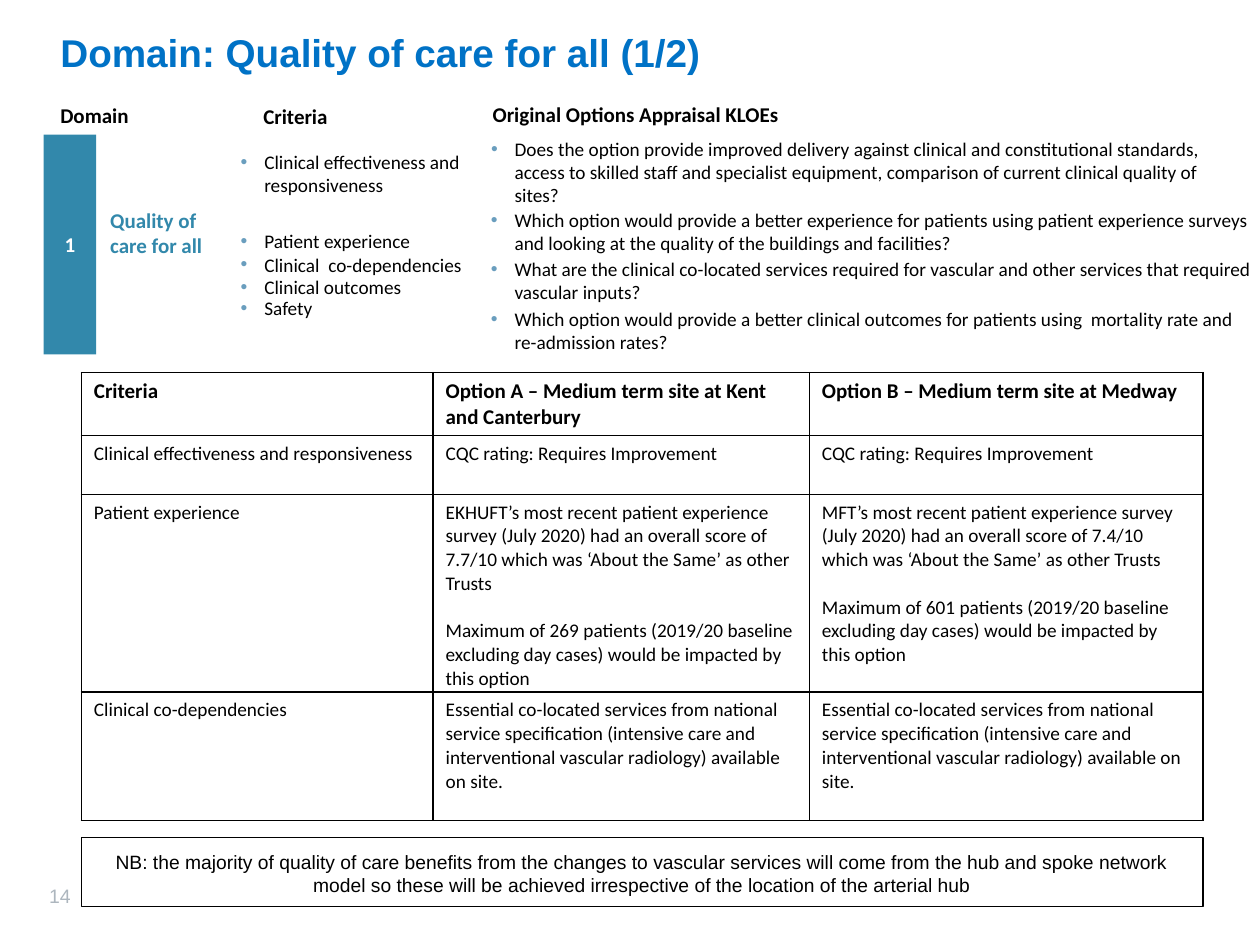
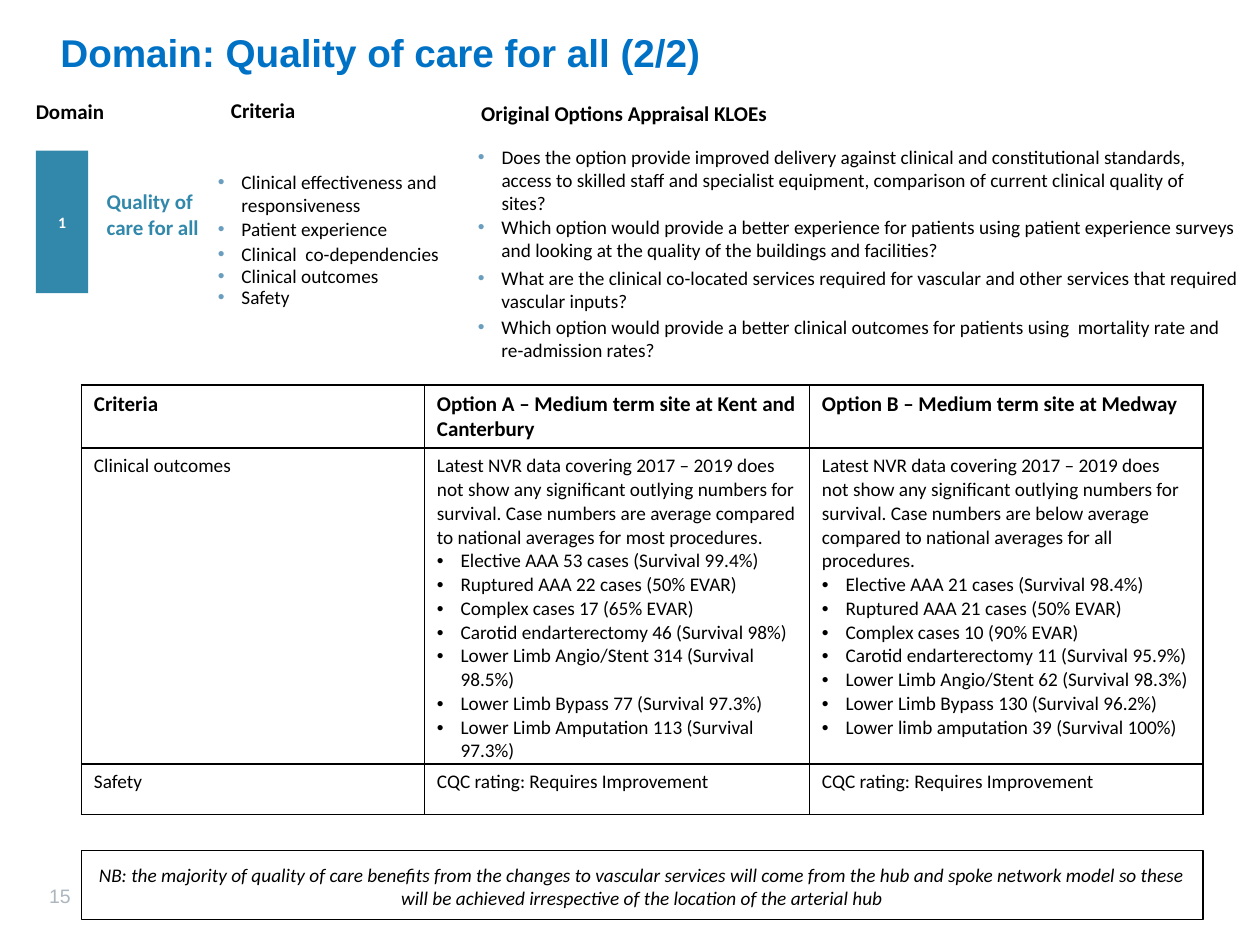
import lxml.etree
import pptx
import pptx.dml.color
import pptx.enum.shapes
import pptx.enum.text
import pptx.oxml.ns
import pptx.util

Pt = pptx.util.Pt
RGBColor = pptx.dml.color.RGBColor
ALIGN = pptx.enum.text.PP_ALIGN
ANCHOR = pptx.enum.text.MSO_ANCHOR
RECTANGLE = pptx.enum.shapes.MSO_SHAPE.RECTANGLE
qn = pptx.oxml.ns.qn

TITLE_BLUE = RGBColor(0x00, 0x72, 0xC6)
TEAL = RGBColor(0x32, 0x88, 0xAB)
BULLET_BLUE = RGBColor(0x6A, 0x9E, 0xBE)
PAGE_GREY = RGBColor(0xAD, 0xB6, 0xBE)
BLACK = RGBColor(0, 0, 0)
WHITE = RGBColor(255, 255, 255)

BODY = {"name": "Calibri", "size": Pt(11), "bold": False, "color": BLACK}
HEADING = BODY | {"size": Pt(12), "bold": True}
DOMAIN_LABEL = HEADING | {"color": TEAL}
TITLE = {"name": "Arial", "size": Pt(22.1), "bold": True, "color": TITLE_BLUE}
PAGE_NUMBER = {"name": "Arial", "size": Pt(11.1), "color": PAGE_GREY}
NO_INSETS = (0, 0, 0, 0)
TEXT_INSETS = (7.2, 3.6, 7.2, 3.6)
BULLET_INDENT = 13.5

HEADINGS = ["Domain", "Criteria", "Original Options Appraisal KLOEs"]
CRITERIA = [
    "Clinical effectiveness and responsiveness",
    "Patient experience",
    "Clinical  co-dependencies",
    "Clinical outcomes",
    "Safety",
]
KLOES = [
    "Does the option provide improved delivery against clinical and constitutional standards, access to skilled "
    "staff and specialist equipment, comparison of current clinical quality of sites?",
    "Which option would provide a better experience for patients using patient experience surveys and looking at "
    "the quality of the buildings and facilities?",
    "What are the clinical co-located services required for vascular and other services that required vascular inputs?",
    "Which option would provide a better clinical outcomes for patients using  mortality rate and re-admission rates?",
]
NOTE = ("NB: the majority of quality of care benefits from the changes to vascular services will come from the hub "
        "and spoke network model so these will be achieved irrespective of the location of the arterial hub")
OPTIONS = ["Criteria", "Option A – Medium term site at Kent and Canterbury", "Option B – Medium term site at Medway"]
RATING = "CQC rating: Requires Improvement"
CO_LOCATED = ("Essential co-located services from national service specification (intensive care and interventional "
              "vascular radiology) available on site.")


def survey(trust, score, patients):
    """Return the patient experience paragraphs for one option."""
    return [
        {"text": f"{trust}’s most recent patient experience survey (July 2020) had an overall score of {score}/10 "
                 "which was ‘About the Same’ as other Trusts"},
        {"text": f"Maximum of {patients} patients (2019/20 baseline excluding day cases) would be impacted by "
                 "this option", "space_before": Pt(13.5)},
    ]


def outcomes(comparison, cases):
    """Return the clinical outcome paragraphs for one option."""
    intro = ("Latest NVR data covering 2017 – 2019 does not show any significant outlying numbers for survival. "
             f"Case numbers are {comparison} procedures.")
    return [{"text": intro}] + [{"text": case, "bullet": BLACK} for case in cases]


OUTCOMES_A = outcomes("average compared to national averages for most", [
    "Elective AAA 53 cases (Survival 99.4%)",
    "Ruptured AAA 22 cases (50% EVAR)",
    "Complex cases 17 (65% EVAR)",
    "Carotid endarterectomy 46 (Survival 98%)",
    "Lower Limb Angio/Stent 314 (Survival 98.5%)",
    "Lower Limb Bypass 77 (Survival 97.3%)",
    "Lower Limb Amputation 113 (Survival 97.3%)",
])
OUTCOMES_B = outcomes("below average compared to national averages for all", [
    "Elective AAA 21 cases (Survival 98.4%)",
    "Ruptured AAA 21 cases (50% EVAR)",
    "Complex cases 10 (90% EVAR)",
    "Carotid endarterectomy 11 (Survival 95.9%)",
    "Lower Limb Angio/Stent 62 (Survival 98.3%)",
    "Lower Limb Bypass 130 (Survival 96.2%)",
    "Lower limb amputation 39 (Survival 100%)",
])

SLIDES = [
    {
        "title": "Domain: Quality of care for all (1/2)",
        "page": "14",
        "overview": (25, 58, 700, 150),
        "headings": [(9.5, 0.5), (125.5, 1), (256.5, 0)],
        "band": (0, 19, 30, 125.5),
        "band_size": Pt(12),
        "label": (38, 60.5),
        "criteria": (112.5, [28, 73, 86.5, 99.5, 111.5]),
        "kloes": (248.5, [17, 57.5, 85.5, 114]),
        "table": (46.5, 213, 641, 256),
        "columns": [201, 215, 225],
        "heights": [36, 33.5, 113, 73.5],
        "rows": [
            OPTIONS,
            ["Clinical effectiveness and responsiveness", RATING, RATING],
            ["Patient experience", survey("EKHUFT", "7.7", 269), survey("MFT", "7.4", 601)],
            ["Clinical co-dependencies", CO_LOCATED, CO_LOCATED],
        ],
        "note": (46.5, 478.5, 641, 39.5),
        "note_font": BODY | {"name": "Arial"},
    },
    {
        "title": "Domain: Quality of care for all (2/2)",
        "page": "15",
        "overview": (20.5, 55, 700, 150),
        "headings": [(0, 1.5), (111.5, 0.5), (254.5, 2.5)],
        "band": (0, 31, 30, 81.5),
        "band_size": Pt(9),
        "label": (40.5, 53),
        "criteria": (104, [42.5, 69, 83.5, 96, 108]),
        "kloes": (245.5, [24.5, 64.5, 93.5, 121.5]),
        "table": (46.5, 220, 641, 245.5),
        "columns": [196, 220, 225],
        "heights": [36, 180.5, 29],
        "rows": [
            OPTIONS,
            ["Clinical outcomes", OUTCOMES_A, OUTCOMES_B],
            ["Safety", RATING, RATING],
        ],
        "note": (46.5, 486, 641, 39.5),
        "note_font": BODY | {"italic": True},
    },
]


def add_element(parent, tag, **attributes):
    """Append an XML child with attributes and return it."""
    child = lxml.etree.SubElement(parent, qn(tag))
    for name, value in attributes.items():
        child.set(name, str(value))
    return child


def set_bullet(paragraph, color):
    """Give a paragraph a hanging bullet in one colour."""
    properties = paragraph._p.get_or_add_pPr()
    properties.set("marL", str(Pt(BULLET_INDENT)))
    properties.set("indent", str(-Pt(BULLET_INDENT)))
    add_element(add_element(properties, "a:buClr"), "a:srgbClr", val=color)
    add_element(properties, "a:buFont", typeface="Arial")
    add_element(properties, "a:buChar", char="•")


def write(frame, content, font, insets=TEXT_INSETS, align=ALIGN.LEFT, anchor=ANCHOR.TOP):
    """Fill a text frame with a string or a list of paragraph dicts."""
    frame.word_wrap = True
    frame.vertical_anchor = anchor
    for side, inset in zip(("left", "top", "right", "bottom"), insets):
        setattr(frame, f"margin_{side}", Pt(inset))
    items = [{"text": content}] if isinstance(content, str) else content
    for index, item in enumerate(items):
        paragraph = frame.add_paragraph() if index else frame.paragraphs[0]
        paragraph.alignment = align
        if "space_before" in item:
            paragraph.space_before = item["space_before"]
        if "bullet" in item:
            set_bullet(paragraph, item["bullet"])
        run = paragraph.add_run()
        run.text = item["text"]
        for name, value in font.items():
            if name == "color":
                run.font.color.rgb = value
            else:
                setattr(run.font, name, value)


def add_text(slide, box, content, font, insets=NO_INSETS):
    """Add a wrapped text box."""
    shape = slide.shapes.add_textbox(*map(Pt, box))
    write(shape.text_frame, content, font, insets)


def add_rectangle(slide, box, fill, line=None):
    """Add a flat rectangle and return it."""
    shape = slide.shapes.add_shape(RECTANGLE, *map(Pt, box))
    shape.shadow.inherit = False
    shape.fill.solid()
    shape.fill.fore_color.rgb = fill
    if line is None:
        shape.line.fill.background()
    else:
        shape.line.color.rgb = line
        shape.line.width = Pt(0.75)
    return shape


def add_title(slide, box, text):
    """Place and format the title placeholder."""
    title = slide.shapes.title
    title.left, title.top, title.width, title.height = map(Pt, box)
    title.text_frame.auto_size = pptx.enum.text.MSO_AUTO_SIZE.NONE
    write(title.text_frame, text, TITLE, (0, 3.6, 0, 3.6))


def add_overview(slide, box, page):
    """Add the domain band, its criteria and its appraisal questions."""
    left, top = box[:2]
    for heading, (x, y) in zip(HEADINGS, page["headings"]):
        add_text(slide, (left + x, top + y, 175, 14.5), heading, HEADING)

    x, y, width, height = page["band"]
    band = add_rectangle(slide, (left + x, top + y, width, height), TEAL)
    number_font = HEADING | {"size": page["band_size"], "color": WHITE}
    write(band.text_frame, "1", number_font, align=ALIGN.CENTER, anchor=ANCHOR.MIDDLE)
    x, y = page["label"]
    add_text(slide, (left + x, top + y, 63.5, 29), "Quality of care for all", DOMAIN_LABEL)

    x, tops = page["criteria"]
    for criterion, y in zip(CRITERIA, tops):
        add_text(slide, (left + x, top + y, 131, 13.5), [{"text": criterion, "bullet": BULLET_BLUE}], BODY)
    x, tops = page["kloes"]
    for question, y, width in zip(KLOES, tops, (425.5, 451.5, 451.5, 451.5)):
        add_text(slide, (left + x, top + y, width, 34), [{"text": question, "bullet": BULLET_BLUE}],
                 BODY, TEXT_INSETS)


def set_borders(cell):
    """Draw a thin black line on every side of a cell."""
    properties = cell._tc.get_or_add_tcPr()
    for tag in ("a:lnL", "a:lnR", "a:lnT", "a:lnB"):
        line = add_element(properties, tag, w=Pt(1))
        add_element(add_element(line, "a:solidFill"), "a:srgbClr", val=BLACK)


def add_options_table(slide, box, page):
    """Add the table that compares the two options."""
    rows, columns = page["rows"], page["columns"]
    table = slide.shapes.add_table(len(rows), len(columns), *map(Pt, box)).table
    table.first_row = table.horz_banding = False
    for column, width in zip(table.columns, columns):
        column.width = Pt(width)
    for row_index, (row, height) in enumerate(zip(rows, page["heights"])):
        table.rows[row_index].height = Pt(height)
        for column_index, content in enumerate(row):
            cell = table.cell(row_index, column_index)
            set_borders(cell)
            cell.fill.solid()
            cell.fill.fore_color.rgb = WHITE
            write(cell.text_frame, content, BODY if row_index else HEADING)
            cell.margin_left = cell.margin_right = Pt(7.2)
            cell.margin_top, cell.margin_bottom = Pt(3.6), Pt(0)


def add_note(slide, box, font):
    """Add the boxed note at the foot of the slide."""
    note = add_rectangle(slide, box, WHITE, BLACK)
    write(note.text_frame, NOTE, font, (7.2,) * 4, ALIGN.CENTER)


def add_domain_slide(presentation, page):
    """Add one slide of the domain appraisal."""
    slide = presentation.slides.add_slide(presentation.slide_layouts[5])
    add_title(slide, (34.5, 13, 589, 65.5), page["title"])
    add_text(slide, (21, 501.5, 47, 21), page["page"], PAGE_NUMBER, TEXT_INSETS)
    add_overview(slide, page["overview"], page)
    add_options_table(slide, page["table"], page)
    add_note(slide, page["note"], page["note_font"])


def main():
    """Build and save the presentation."""
    presentation = pptx.Presentation()
    presentation.slide_width, presentation.slide_height = Pt(720), Pt(540)
    for page in SLIDES:
        add_domain_slide(presentation, page)
    presentation.save("out.pptx")


if __name__ == "__main__":
    main()
